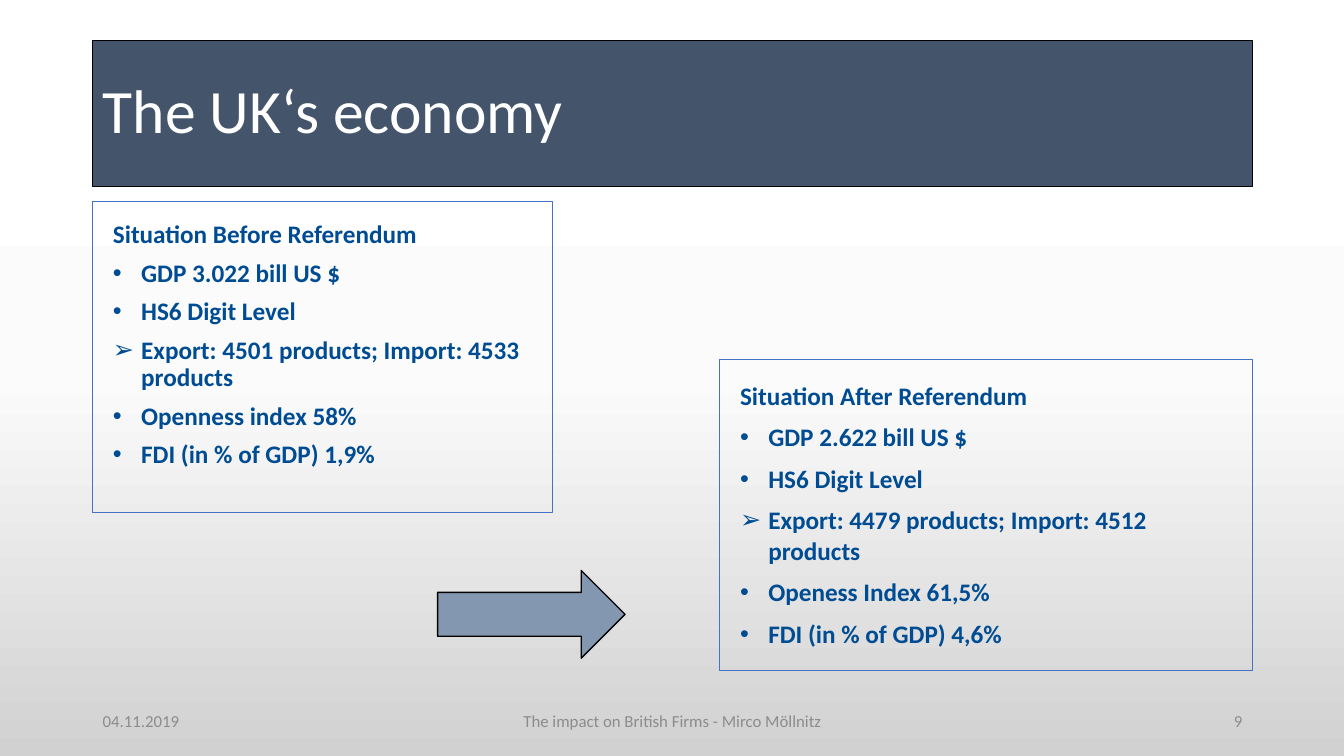
"""Build the slide comparing the UK's economy before and after the referendum."""
from copy import deepcopy

from lxml.etree import SubElement
from pptx import Presentation
from pptx.dml.color import RGBColor
from pptx.enum.shapes import MSO_SHAPE
from pptx.enum.text import MSO_ANCHOR, MSO_AUTO_SIZE, PP_ALIGN
from pptx.oxml.ns import qn
from pptx.util import Inches, Pt


def rgb(value):
    """Turn a hex string into a colour."""
    return RGBColor.from_string(value)


class SlideBuilder:
    """Holds the style and the current slide."""

    font = "Calibri"
    navy, blue, steel = "44546A", "004C93", "8497B0"
    outline, grey, black, white = "4472C4", "8C8C8C", "000000", "FFFFFF"

    def __init__(self, prs):
        """Add a title and content slide."""
        self.s = prs.slides.add_slide(prs.slide_layouts[1])

    def background(self, stops, angle):
        """Fill the background with a linear gradient."""
        fill = self.s.background.fill
        fill.gradient()
        fill.gradient_angle = angle
        gs_list = self.s._element.find(".//" + qn("a:gsLst"))
        while len(gs_list) < len(stops):
            gs_list.append(deepcopy(gs_list[-1]))
        for stop, (position, color) in zip(fill.gradient_stops, stops):
            stop.position = position
            stop.color.rgb = rgb(color)

    def place(self, sp, left, top, width, height):
        """Move and size a shape."""
        sp.left, sp.top = Inches(left), Inches(top)
        sp.width, sp.height = Inches(width), Inches(height)

    def paint(self, sp, fill, line, weight):
        """Set the fill and outline of a shape."""
        if fill:
            sp.fill.solid()
            sp.fill.fore_color.rgb = rgb(fill)
        else:
            sp.fill.background()
        sp.line.color.rgb = rgb(line)
        sp.line.width = Pt(weight)

    def format_runs(self, p, size, color, bold=False):
        """Format the runs of a paragraph."""
        for r in p.runs:
            r.font.name = self.font
            r.font.size = Pt(size)
            r.font.bold = bold
            r.font.color.rgb = rgb(color)

    def title(self, text, *box):
        """Fill the title placeholder."""
        sp = self.s.shapes.title
        self.place(sp, *box)
        self.paint(sp, self.navy, self.black, 1)
        tf = sp.text_frame
        tf.text = text
        tf.auto_size = MSO_AUTO_SIZE.NONE
        tf.vertical_anchor = MSO_ANCHOR.MIDDLE
        p = tf.paragraphs[0]
        p.alignment = PP_ALIGN.LEFT
        p.line_spacing = 0.9
        self.format_runs(p, 44, self.white)

    def footer(self, text, align, *box):
        """Add one footer text."""
        tf = self.s.shapes.add_textbox(*map(Inches, box)).text_frame
        tf.word_wrap = True
        tf.vertical_anchor = MSO_ANCHOR.MIDDLE
        tf.text = text
        tf.paragraphs[0].alignment = align
        self.format_runs(tf.paragraphs[0], 12, self.grey)

    def bullet(self, p, char):
        """Set the bullet and indent of a paragraph."""
        pPr = p._p.get_or_add_pPr()
        indent = Inches(0.28) if char else 0
        pPr.set("marL", str(indent))
        pPr.set("indent", str(-indent))
        if char:
            SubElement(pPr, qn("a:buFont"), typeface="Arial")
            SubElement(pPr, qn("a:buChar"), char=char)
        else:
            SubElement(pPr, qn("a:buNone"))

    def situation(self, sp, heading, facts, spacing, *box):
        """Fill an outlined box with a heading and a bulleted list."""
        self.place(sp, *box)
        self.paint(sp, None, self.outline, 0.75)
        tf = sp.text_frame
        tf.word_wrap = True
        tf.auto_size = MSO_AUTO_SIZE.NONE
        tf.vertical_anchor = MSO_ANCHOR.TOP
        tf.margin_left = tf.margin_right = Inches(0.2)
        tf.margin_top = tf.margin_bottom = Inches(0.2)
        tf.text = "\n".join([heading, *facts])
        for p, char in zip(tf.paragraphs, ["", "•", "•", "➢", "•", "•"]):
            p.alignment = PP_ALIGN.LEFT
            p.line_spacing = spacing
            p.space_before, p.space_after = Pt(3.6), Pt(4.5)
            self.bullet(p, char)
            self.format_runs(p, 18, self.blue, True)

    def arrow(self, *box):
        """Add a right block arrow."""
        sp = self.s.shapes.add_shape(MSO_SHAPE.RIGHT_ARROW, *map(Inches, box))
        sp.shadow.inherit = False
        self.paint(sp, self.steel, self.black, 1)


def main():
    """Build and save the slide."""
    prs = Presentation()
    prs.slide_width, prs.slide_height = Inches(13.33), Inches(7.5)
    b = SlideBuilder(prs)
    b.background([(0.15, "FFFFFF"), (0.5, "FBFBFB"), (1, "D1D1D1")], 270)
    b.title("The UK‘s economy", 0.92, 0.4, 11.5, 1.45)
    for text, align, left, width in [
        ("04.11.2019", PP_ALIGN.LEFT, 0.92, 3),
        ("The impact on British Firms - Mirco Möllnitz", PP_ALIGN.CENTER, 4.42, 4.5),
        ("9", PP_ALIGN.RIGHT, 9.42, 3),
    ]:
        b.footer(text, align, left, 6.95, width, 0.4)
    before = [
        "GDP 3.022 bill US $",
        "HS6 Digit Level",
        "Export: 4501 products; Import: 4533 products",
        "Openness index 58%",
        "FDI (in % of GDP) 1,9%",
    ]
    after = [
        "GDP 2.622 bill US $",
        "HS6 Digit Level",
        "Export: 4479 products; Import: 4512 products",
        "Openess Index 61,5%",
        "FDI (in % of GDP) 4,6%",
    ]
    b.situation(b.s.placeholders[1], "Situation Before Referendum", before,
                0.9, 0.92, 2, 4.56, 3.08)
    b.arrow(4.34, 5.66, 1.86, 0.87)
    b.situation(b.s.shapes.add_textbox(0, 0, 0, 0), "Situation After Referendum",
                after, 1.0, 7.14, 3.57, 5.28, 3.08)
    prs.save("out.pptx")


if __name__ == "__main__":
    main()
